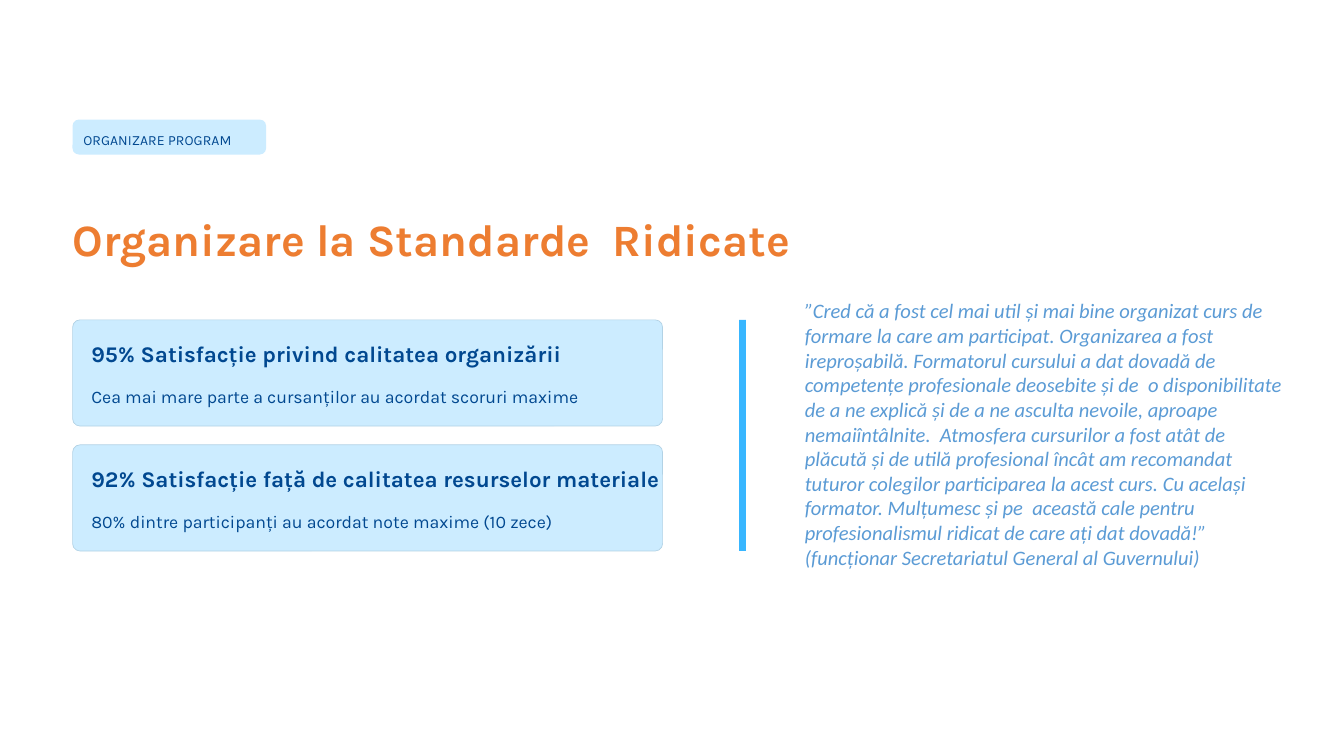
from pptx import Presentation
from pptx.dml.color import RGBColor
from pptx.enum.shapes import MSO_SHAPE as SHAPE
from pptx.util import Pt

PX = 9144  # 100 px to the inch
COLORS = {
    "pale": "CCECFF", "edge": "B2D2E5", "navy": "014890",
    "orange": "ED7D31", "sky": "38B6FF", "quote": "5B9BD5",
}

prs = Presentation()
prs.slide_width = 1000 * PX
prs.slide_height = prs.slide_width * 9 // 16
s = prs.slides.add_slide(prs.slide_layouts[6])


def add_box(kind, x, y, w, h, fill, line=None, radius=None):
    sp = s.shapes.add_shape(kind, x * PX, y * PX, w * PX, h * PX)
    sp.shadow.inherit = False
    sp.fill.solid()
    sp.fill.fore_color.rgb = RGBColor.from_string(COLORS[fill])
    if line:
        sp.line.color.rgb = RGBColor.from_string(COLORS[line])
        sp.line.width = Pt(0.38)
    else:
        sp.line.fill.background()
    if radius is not None:
        sp.adjustments[0] = radius


def add_text(text, x, y, w, h, size, color="navy", font="Karla",
             bold=False, italic=False, leading=None, wrap=False, inset=(0, 0)):
    tf = s.shapes.add_textbox(x * PX, y * PX, w * PX, h * PX).text_frame
    tf.word_wrap = wrap
    tf.margin_left = tf.margin_right = inset[0] * PX
    tf.margin_top = tf.margin_bottom = inset[1] * PX
    p = tf.paragraphs[0]
    if leading:
        p.line_spacing = Pt(leading)
    r = p.add_run()
    r.text = text
    r.font.name, r.font.size = font, Pt(size)
    r.font.bold, r.font.italic = bold, italic
    r.font.color.rgb = RGBColor.from_string(COLORS[color])


# Section tag
add_box(SHAPE.ROUNDED_RECTANGLE, 54, 89, 144, 26, "pale", radius=0.18)
add_text("ORGANIZARE PROGRAM", 62, 93, 127, 17, 7.5, leading=12.5)

# Title
add_text("Organizare la Standarde  Ridicate", 54, 155, 674, 42, 24,
         color="orange", bold=True, leading=30.5)

# Result cards
cards = [
    ("95% Satisfacție privind calitatea organizării",
     "Cea mai mare parte a cursanților au acordat scoruri maxime"),
    ("92% Satisfacție față de calitatea resurselor materiale",
     "80% dintre participanți au acordat note maxime (10 zece)"),
]
for i, (heading, detail) in enumerate(cards):
    top = 238 + 93 * i
    add_box(SHAPE.ROUNDED_RECTANGLE, 54, top, 439, 79, "pale", "edge", 0.07)
    add_text(heading, 68, top + 14, 430, 21, 12, bold=True, leading=15)
    add_text(detail, 68, top + 43, 411, 22, 9.5, leading=15.5)

# Divider bar
add_box(SHAPE.RECTANGLE, 550, 238, 5, 172, "sky")

# Participant quote
add_text(
    "”Cred că a fost cel mai util și mai bine organizat curs de formare la care "
    "am participat. Organizarea a fost ireproșabilă. Formatorul cursului a dat "
    "dovadă de competențe profesionale deosebite și de  o disponibilitate de a ne "
    "explică și de a ne asculta nevoile, aproape nemaiîntâlnite.  Atmosfera "
    "cursurilor a fost atât de plăcută și de utilă profesional încât am recomandat "
    "tuturor colegilor participarea la acest curs. Cu același formator. Mulțumesc "
    "și pe  această cale pentru profesionalismul ridicat de care ați dat dovadă!” "
    "(funcționar Secretariatul General al Guvernului)",
    589, 217, 380, 214, 11, color="quote", font="Calibri", italic=True,
    wrap=True, inset=(10, 5))

prs.save("out.pptx")
